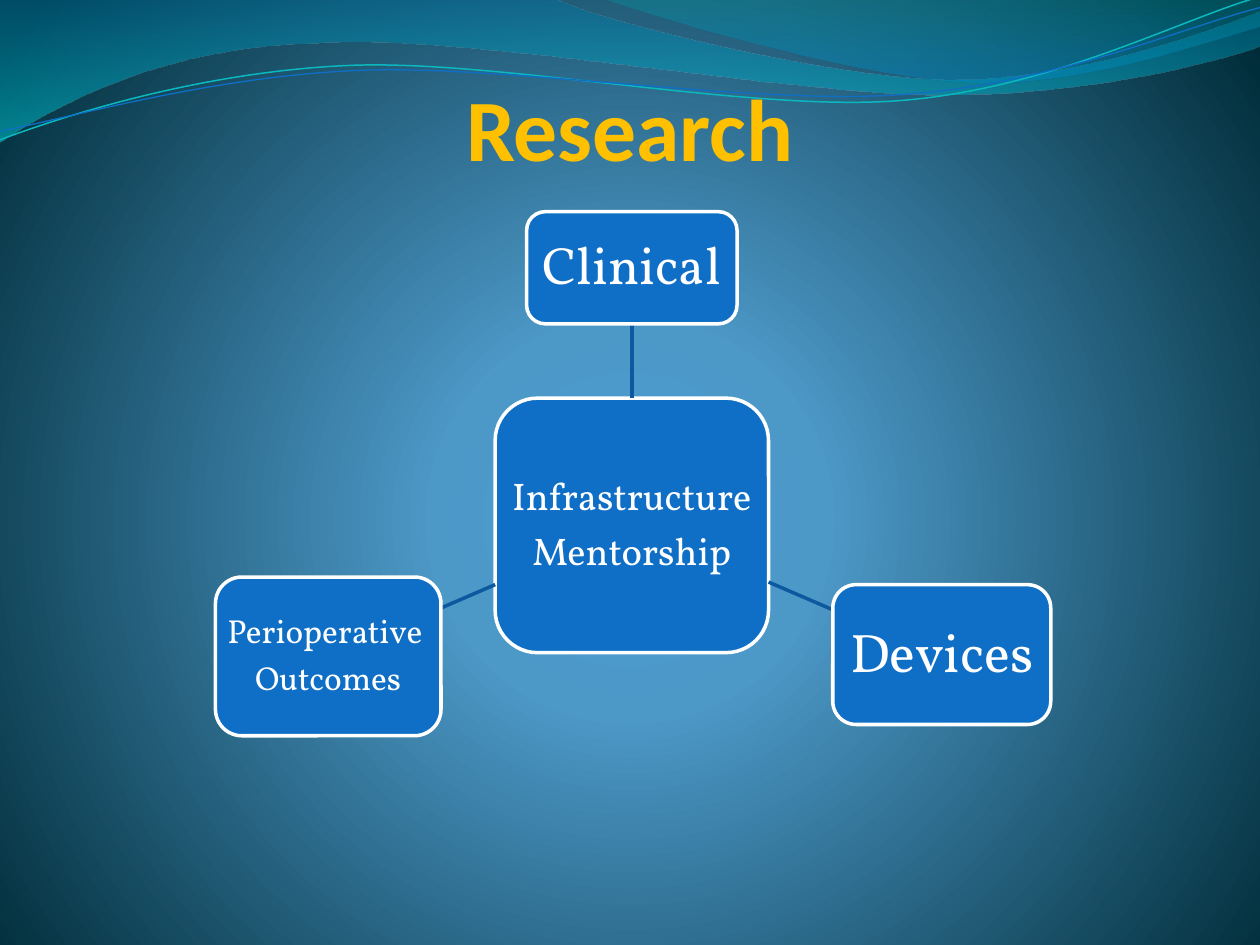
import pptx
import pptx.dml.color
import pptx.enum.shapes
import pptx.enum.text
import pptx.oxml
import pptx.oxml.ns
import pptx.util
from pptx.util import Inches

RGBColor = pptx.dml.color.RGBColor
GOLD = RGBColor(0xFF, 0xC0, 0x00)
WHITE = RGBColor(0xFF, 0xFF, 0xFF)
BLUE = RGBColor(0x0F, 0x6F, 0xC6)
DARK_BLUE = RGBColor(0x0C, 0x59, 0x9F)
AQUA = RGBColor(0x0A, 0xB8, 0xBF)
# Gradient stops: position %, colour, opacity %
BACKDROP = [(0, RGBColor(0x4A, 0xA0, 0xD6), 100),
            (25, RGBColor(0x4C, 0x98, 0xC7), 100),
            (100, RGBColor(0x00, 0x2C, 0x38), 100)]
LEFT_WAVE = [(0, RGBColor(0x00, 0x74, 0xA1), 45), (100, RGBColor(0x00, 0xC6, 0xCF), 55)]
RIGHT_WAVE = [(0, RGBColor(0x00, 0xA1, 0xA9), 30), (80, RGBColor(0x00, 0x8B, 0xBF), 45)]
DOWNWARD = '<a:lin ang="5400000" scaled="0"/>'
RADIAL = ('<a:path path="circle"><a:fillToRect l="10000" t="110000" '
          'r="10000" b="100000"/></a:path>')


def set_gradient(fill, stops, direction):
    """Give a fill the stops, running in the given direction."""
    fill.gradient()
    old = fill._xPr.find(pptx.oxml.ns.qn("a:gradFill"))
    marks = ""
    for pos, color, opacity in stops:
        alpha = f'<a:alpha val="{opacity * 1000}"/>' if opacity < 100 else ""
        marks += (f'<a:gs pos="{pos * 1000}"><a:srgbClr val="{color}">'
                  f'{alpha}</a:srgbClr></a:gs>')
    new = pptx.oxml.parse_xml(
        f'<a:gradFill {pptx.oxml.ns.nsdecls("a")} rotWithShape="1">'
        f'<a:gsLst>{marks}</a:gsLst>{direction}</a:gradFill>')
    old.getparent().replace(old, new)


def bend_segments(sp, segments):
    """Merge each curve's three line steps into one cubic curve."""
    qn = pptx.oxml.ns.qn
    steps = iter(list(sp._element.iter(qn("a:lnTo"))))
    for seg in segments:
        first = next(steps)
        if len(seg) == 6:
            first.tag = qn("a:cubicBezTo")
            for _ in range(2):
                step = next(steps)
                first.append(step[0])
                step.getparent().remove(step)


def add_curve(slide, start, segments, stops=None, line=None, width=1):
    """Draw segments: 2 numbers make a line, 6 a cubic curve."""
    pts = [(Inches(seg[i]), Inches(seg[i + 1]))
           for seg in segments for i in range(0, len(seg), 2)]
    builder = slide.shapes.build_freeform(*map(Inches, start))
    builder.add_line_segments(pts, close=stops is not None)
    sp = builder.convert_to_shape()
    bend_segments(sp, segments)
    sp.shadow.inherit = False
    if stops:
        set_gradient(sp.fill, stops, DOWNWARD)
        sp.line.fill.background()
    else:
        sp.fill.background()
        sp.line.color.rgb = line
        sp.line.width = pptx.util.Pt(width)


def set_text(sp, text, size, color, font="Vollkorn", bold=False, anchor="MIDDLE",
             insets=(0, 0, 0, 0), spacing=None, after=None):
    tf = sp.text_frame
    tf.word_wrap = True
    tf.vertical_anchor = pptx.enum.text.MSO_ANCHOR[anchor]
    tf.margin_left, tf.margin_top, tf.margin_right, tf.margin_bottom = map(Inches, insets)
    for i, content in enumerate(text.split("\n")):
        p = tf.add_paragraph() if i else tf.paragraphs[0]
        p.alignment = pptx.enum.text.PP_ALIGN.CENTER
        if spacing:
            p.line_spacing = spacing
        if after:
            p._p.get_or_add_pPr().append(pptx.oxml.parse_xml(
                f'<a:spcAft {pptx.oxml.ns.nsdecls("a")}>'
                f'<a:spcPct val="{after * 1000}"/></a:spcAft>'))
        r = p.add_run()
        r.text = content
        r.font.name, r.font.size, r.font.bold = font, pptx.util.Pt(size), bold
        r.font.color.rgb = color


def add_waves(slide):
    # Filled bands
    add_curve(slide, (0, 0), [
        (4.4, -0.01), (4.76, 0.17, 6.64, 0.63, 7.58, 0.63),
        (8.53, 0.63, 9.58, 0.26, 10, 0.09), (10.01, 0.36),
        (9.83, 0.44, 8.7, 0.76, 7.46, 0.75), (6.22, 0.75, 3.82, 0.28, 2.57, 0.34),
        (1.29, 0.36, 0.46, 0.83, -0.01, 1.13)], stops=LEFT_WAVE)
    add_curve(slide, (4.79, -0.01), [
        (5.09, 0.11, 6.82, 0.62, 7.69, 0.65), (8.56, 0.69, 9.61, 0.32, 10, 0.21),
        (10, 0)], stops=RIGHT_WAVE)
    # Thin strands
    add_curve(slide, (0, 1.11), [
        (0.48, 0.93, 1.58, 0.57, 2.77, 0.52), (3.95, 0.47, 5.93, 0.89, 7.13, 0.8),
        (8.33, 0.71, 9.38, 0.15, 9.98, -0.02)], line=AQUA, width=0.85)
    add_curve(slide, (0, 1.04), [
        (0.47, 0.96, 1.64, 0.61, 2.83, 0.56), (4.03, 0.51, 5.97, 0.84, 7.17, 0.75),
        (8.36, 0.67, 9.41, 0.21, 10, 0.06)], line=BLUE, width=0.75)


def add_title(slide, left, top, width, height):
    sp = slide.shapes.add_textbox(*map(Inches, (left, top, width, height)))
    set_text(sp, "Research", size=50, color=GOLD, font="Calibri", bold=True,
             anchor="BOTTOM", insets=(0, 0.05, 0, 0))


def add_node(slide, box, text, size):
    sp = slide.shapes.add_shape(
        pptx.enum.shapes.MSO_SHAPE.ROUNDED_RECTANGLE, *map(Inches, box))
    sp.shadow.inherit = False
    sp.fill.solid()
    sp.fill.fore_color.rgb = BLUE
    sp.line.color.rgb = WHITE
    sp.line.width = pptx.util.Pt(2)
    set_text(sp, text, size=size, color=WHITE, insets=(0.01,) * 4,
             spacing=0.9, after=35)
    return sp


def add_link(slide, x1, y1, x2, y2):
    link = slide.shapes.add_connector(
        pptx.enum.shapes.MSO_CONNECTOR.STRAIGHT, *map(Inches, (x1, y1, x2, y2)))
    link.line.color.rgb = DARK_BLUE
    link.line.width = pptx.util.Pt(2)
    link._element.spPr.append(pptx.oxml.parse_xml(
        f'<a:effectLst {pptx.oxml.ns.nsdecls("a")}/>'))
    return link


def add_hub_diagram(slide, left, top):
    """Hub with three satellites, placed from the diagram's top-left corner."""
    def node(x, y, w, h, *label):
        return add_node(slide, (left + x, top + y, w, h), *label)

    def link(x1, y1, x2, y2):
        return add_link(slide, left + x1, top + y1, left + x2, top + y2)

    hub = node(2.22, 1.48, 2.17, 2.02, "Infrastructure\nMentorship", 22)
    # Links lie under the satellites
    up = link(3.3, 1.48, 3.3, 0.89)
    link(4.39, 2.94, 4.9, 3.16)
    link(2.22, 2.96, 1.78, 3.15)
    # Satellites
    clinical = node(2.47, 0, 1.67, 0.89, "Clinical", 30)
    node(4.9, 2.96, 1.73, 1.11, "Devices", 31)
    node(0, 2.9, 1.79, 1.26, "Perioperative \nOutcomes", 19)
    up.begin_connect(hub, 0)
    up.end_connect(clinical, 2)


def main():
    prs = pptx.Presentation()
    prs.slide_width, prs.slide_height = Inches(10), Inches(7.5)
    slide = prs.slides.add_slide(prs.slide_layouts[6])
    set_gradient(slide.background.fill, BACKDROP, RADIAL)
    add_waves(slide)
    add_title(slide, 0.5, 0.17, 9, 1.25)
    add_hub_diagram(slide, 1.71, 1.68)
    prs.save("out.pptx")


if __name__ == "__main__":
    main()
